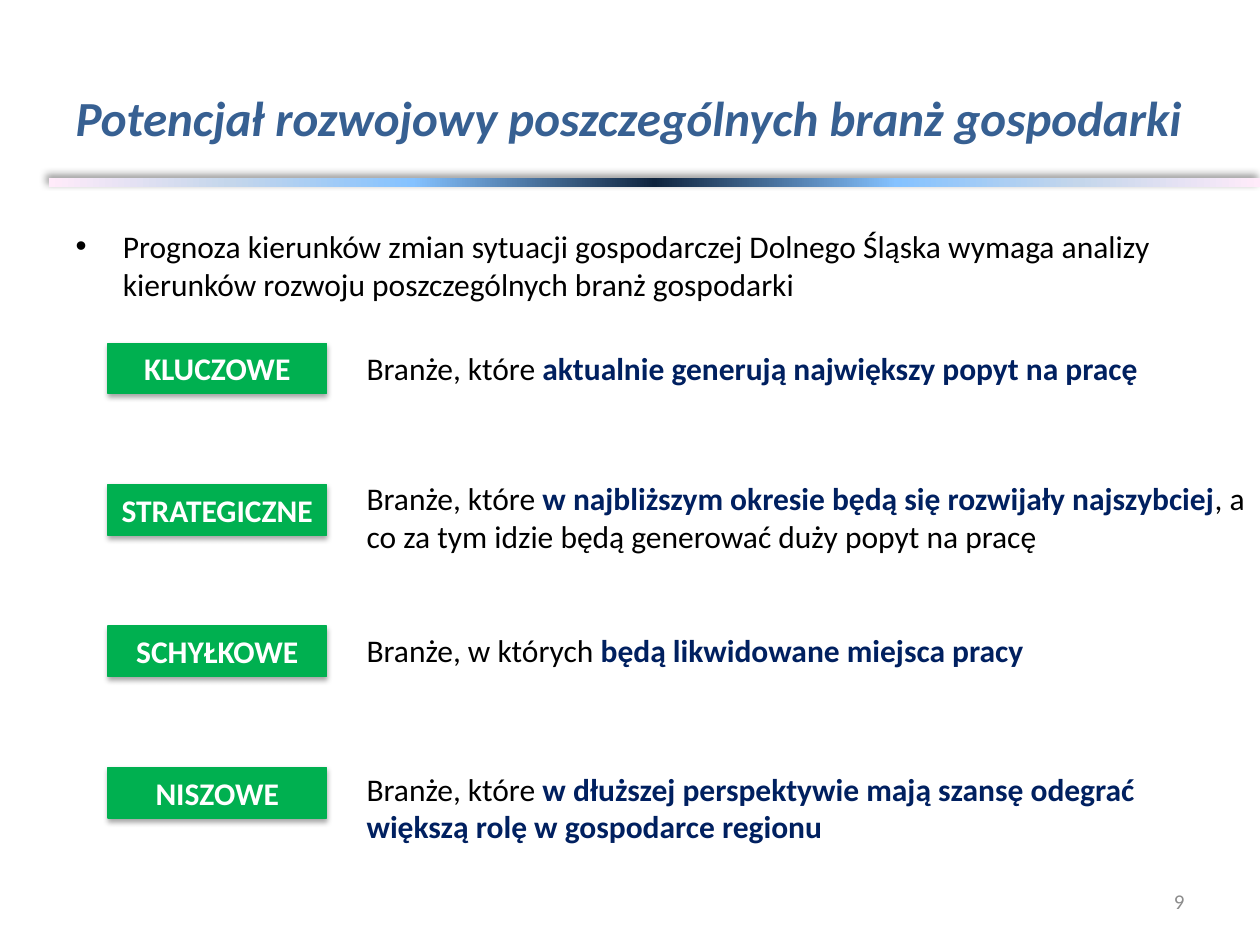
from lxml.etree import SubElement
from pptx import Presentation
from pptx.dml.color import RGBColor
from pptx.enum.shapes import MSO_SHAPE
from pptx.enum.text import MSO_ANCHOR, MSO_AUTO_SIZE, PP_ALIGN
from pptx.oxml import parse_xml
from pptx.oxml.ns import nsdecls, qn
from pptx.util import Cm, Pt

COLORS = {"title": "376092", "text": "000000", "accent": "002060",
          "label": "00B050", "white": "FFFFFF", "number": "8C8C8C"}
FONT = "Calibri"

TITLE = "Potencjał rozwojowy poszczególnych branż gospodarki"
INTRO = ("Prognoza kierunków zmian sytuacji gospodarczej Dolnego Śląska wymaga "
         "analizy kierunków rozwoju poszczególnych branż gospodarki")
PAGE = "9"

# label, (top, width, height) of the description in cm, wraps, [(text, emphasised)]
SECTORS = [
    ("KLUCZOWE", (6.91, 16.18, 1.02), False,
     [("Branże, które ", False),
      ("aktualnie generują największy popyt na pracę", True)]),
    ("STRATEGICZNE", (9.53, 18.26, 1.8), True,
     [("Branże, które ", False),
      ("w najbliższym okresie będą się rozwijały najszybciej", True),
      (", a co za tym idzie będą generować duży popyt na pracę", False)]),
    ("SCHYŁKOWE", (12.6, 13.87, 1.02), False,
     [("Branże, w których ", False),
      ("będą likwidowane miejsca pracy", True)]),
    ("NISZOWE", (15.39, 17.86, 1.8), True,
     [("Branże, które ", False),
      ("w dłuższej perspektywie mają szansę odegrać większą rolę "
       "w gospodarce regionu", True)]),
]
LABEL_LEFT, LABEL_TOP, LABEL_PITCH = 2.18, 6.92, 2.85
LABEL_WIDTH, LABEL_HEIGHT = 4.4, 1.02
TEXT_LEFT = 7.14

# Half of the band's gradient, from its centre outwards; the other half mirrors it
BAND_HALF = [(0, "0F243E"), (40, "85C2FF"), (70, "C4D6EB"), (100, "FFEBFA")]


def rgb(name):
    return RGBColor.from_string(COLORS[name])


def style(r, size, color, bold=False, italic=False):
    f = r.font
    f.name, f.size, f.bold, f.italic = FONT, Pt(size), bold, italic
    f.color.rgb = rgb(color)


def place(sp, left, top, width, height):
    sp.left, sp.top, sp.width, sp.height = map(Cm, (left, top, width, height))


def add_shadow(sp, alpha, blur, dist, angle):
    sp.shadow.inherit = False
    effects = sp._element.spPr.find(qn("a:effectLst"))
    shadow = SubElement(effects, qn("a:outerShdw"), blurRad=str(Pt(blur)),
                        dist=str(Pt(dist)), dir=str(angle * 60000),
                        algn="ctr", rotWithShape="0")
    clr = SubElement(shadow, qn("a:srgbClr"), val="000000")
    SubElement(clr, qn("a:alpha"), val=str(alpha * 1000))


def add_box(slide, left, top, width, height):
    return slide.shapes.add_shape(MSO_SHAPE.RECTANGLE, Cm(left), Cm(top),
                                  Cm(width), Cm(height))


def add_band(slide):
    sp = add_box(slide, 0.99, 3.58, 24.41, 0.2)
    sp.line.fill.background()
    stops = ([(50 - pos / 2, c) for pos, c in reversed(BAND_HALF)]
             + [(50 + pos / 2, c) for pos, c in BAND_HALF[1:]])
    gs = "".join(f'<a:gs pos="{int(pos * 1000)}"><a:srgbClr val="{c}"/></a:gs>'
                 for pos, c in stops)
    grad = parse_xml(f'<a:gradFill {nsdecls("a")} rotWithShape="1"><a:gsLst>{gs}'
                     '</a:gsLst><a:lin ang="0" scaled="0"/></a:gradFill>')
    sp._element.spPr.find(qn("a:prstGeom")).addnext(grad)
    add_shadow(sp, 40, 4, 3, 225)


def add_label(slide, i, text):
    sp = add_box(slide, LABEL_LEFT, LABEL_TOP + i * LABEL_PITCH,
                 LABEL_WIDTH, LABEL_HEIGHT)
    sp.fill.solid()
    sp.fill.fore_color.rgb = sp.line.color.rgb = rgb("label")
    sp.line.width = Pt(0.75)
    add_shadow(sp, 35, 3.1, 1.8, 90)
    tf = sp.text_frame
    tf.text = text
    tf.vertical_anchor = MSO_ANCHOR.TOP
    p = tf.paragraphs[0]
    p.alignment = PP_ALIGN.CENTER
    style(p.runs[0], 18, "white", bold=True)


def add_description(slide, box, wraps, parts):
    top, width, height = box
    tb = slide.shapes.add_textbox(Cm(TEXT_LEFT), Cm(top), Cm(width), Cm(height))
    tb.text_frame.word_wrap = wraps
    p = tb.text_frame.paragraphs[0]
    for text, strong in parts:
        r = p.add_run()
        r.text = text
        style(r, 18, "accent" if strong else "text", bold=strong)


def main():
    prs = Presentation()
    prs.slide_width, prs.slide_height = Cm(25.4), Cm(19.05)
    slide = prs.slides.add_slide(prs.slide_layouts[1])
    title, body = slide.placeholders

    add_band(slide)

    # Title
    place(title, 1.27, 0.76, 22.86, 3.18)
    tf = title.text_frame
    tf.text = TITLE
    tf.auto_size = MSO_AUTO_SIZE.NONE
    tf.vertical_anchor = MSO_ANCHOR.MIDDLE
    tf.paragraphs[0].alignment = PP_ALIGN.LEFT
    style(tf.paragraphs[0].runs[0], 28, "title", bold=True, italic=True)

    # Introductory bullet
    place(body, 1.27, 4.45, 22.86, 12.57)
    tf = body.text_frame
    tf.text = INTRO
    tf.auto_size = MSO_AUTO_SIZE.NONE
    p = tf.paragraphs[0]
    p.space_before = p.space_after = Pt(6)
    style(p.runs[0], 18, "text")

    # Sectors: green label and description
    for i, (label, box, wraps, parts) in enumerate(SECTORS):
        add_label(slide, i, label)
        add_description(slide, box, wraps, parts)

    # Page number
    tb = slide.shapes.add_textbox(Cm(18.21), Cm(17.65), Cm(5.92), Cm(1.02))
    tf = tb.text_frame
    tf.text = PAGE
    tf.word_wrap = True
    tf.vertical_anchor = MSO_ANCHOR.MIDDLE
    tf.paragraphs[0].alignment = PP_ALIGN.RIGHT
    style(tf.paragraphs[0].runs[0], 12, "number")

    prs.save("out.pptx")


if __name__ == "__main__":
    main()
